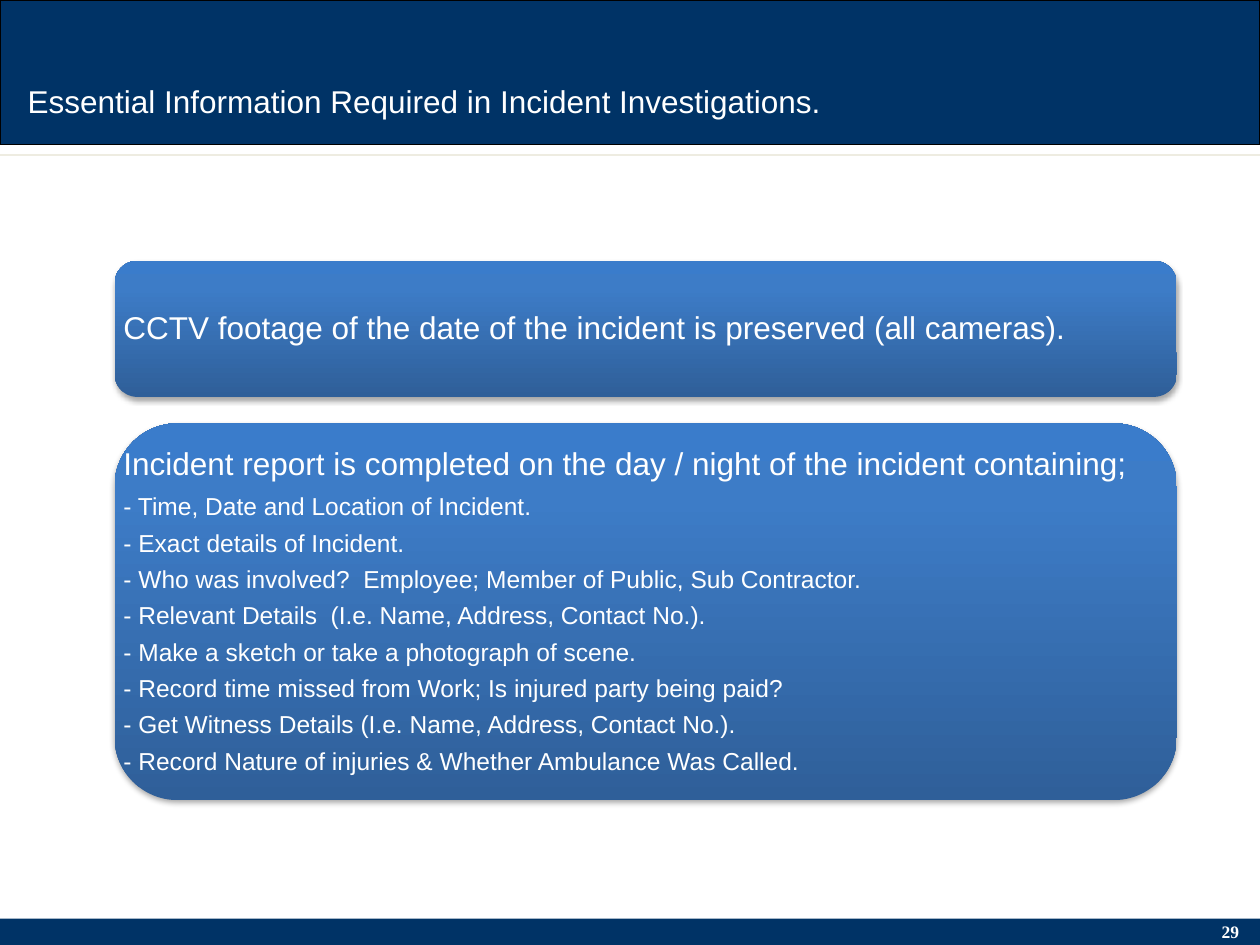
from lxml.etree import SubElement
from pptx import Presentation
from pptx.dml.color import RGBColor
from pptx.enum.shapes import MSO_CONNECTOR, MSO_SHAPE
from pptx.enum.text import MSO_ANCHOR, PP_ALIGN
from pptx.oxml import parse_xml
from pptx.oxml.ns import qn
from pptx.util import Inches, Pt

TITLE = "Essential Information Required in Incident Investigations."
PAGE = "29"
CARDS = [
    (2.07, 1.08, "CCTV footage of the date of the incident is preserved (all cameras).", []),
    (3.36, 2.99, "Incident report is completed on the day / night of the incident containing;", [
        "- Time, Date and Location of Incident.",
        "- Exact details of Incident.",
        "- Who was involved?  Employee; Member of Public, Sub Contractor.",
        "- Relevant Details  (I.e. Name, Address, Contact No.).",
        "- Make a sketch or take a photograph of scene.",
        "- Record time missed from Work; Is injured party being paid?",
        "- Get Witness Details (I.e. Name, Address, Contact No.).",
        "- Record Nature of injuries & Whether Ambulance Was Called.",
    ]),
]
BANDS = [(0, 1.15), (7.29, 0.21)]
LEFT, WIDTH, PAD = 0.91, 8.43, 0.07

NAVY = RGBColor(0x00, 0x33, 0x66)
BLACK = RGBColor(0x00, 0x00, 0x00)
WHITE = RGBColor(0xFF, 0xFF, 0xFF)
CREAM = RGBColor(0xEE, 0xEC, 0xE1)
STOPS = [
    (0, RGBColor(0x2F, 0x5F, 0x99)),
    (80, RGBColor(0x3D, 0x7C, 0xC7)),
    (100, RGBColor(0x3A, 0x7C, 0xCB)),
]
NS = 'xmlns:a="http://schemas.openxmlformats.org/drawingml/2006/main"'


def style(par, text, size, name="Arial", bold=False):
    par.text = text
    font = par.font
    font.size, font.name, font.bold = Pt(size), name, bold
    font.color.rgb = WHITE


def shade(shape):
    stops = "".join(
        f'<a:gs pos="{pos * 1000}"><a:srgbClr val="{tint}"/></a:gs>'
        for pos, tint in STOPS
    )
    grad = parse_xml(
        f'<a:gradFill {NS} rotWithShape="1"><a:gsLst>{stops}</a:gsLst>'
        '<a:lin ang="16200000" scaled="0"/></a:gradFill>'
    )
    glow = parse_xml(
        f'<a:effectLst {NS}><a:outerShdw blurRad="{Pt(3.1)}" dist="{Pt(1.8)}" '
        'dir="5400000" rotWithShape="0"><a:srgbClr val="000000">'
        '<a:alpha val="35000"/></a:srgbClr></a:outerShdw></a:effectLst>'
    )
    shape.line.fill.background()
    props = shape._element.spPr
    props.find(qn("a:prstGeom")).addnext(grad)
    props.append(glow)


def add_card(shapes, top, high, head, items):
    area = Inches(LEFT), Inches(top), Inches(WIDTH), Inches(high)
    shade(shapes.add_shape(MSO_SHAPE.ROUNDED_RECTANGLE, *area))
    frame = shapes.add_textbox(*area).text_frame
    frame.word_wrap = True
    frame.vertical_anchor = MSO_ANCHOR.MIDDLE
    frame.margin_left = frame.margin_right = Inches(PAD)
    frame.margin_top = frame.margin_bottom = Inches(PAD)
    for i, text in enumerate([head] + items):
        par = frame.add_paragraph() if i else frame.paragraphs[0]
        size = 14 if i else 18
        style(par, text, size)
        par.line_spacing = 0.9
        par.space_after = Pt(size * 0.4)


def main():
    deck = Presentation()
    deck.slide_width, deck.slide_height = Inches(10), Inches(7.5)
    slide = deck.slides.add_slide(deck.slide_layouts[5])
    shapes = slide.shapes
    title = shapes.title

    bars = []
    for top, high in BANDS:
        bar = shapes.add_shape(
            MSO_SHAPE.RECTANGLE, 0, Inches(top), deck.slide_width, Inches(high))
        bar.shadow.inherit = False
        bar.fill.solid()
        bar.fill.fore_color.rgb = NAVY
        bar.line.fill.background()
        bars.append(bar)
    edge = bars[0].line
    edge.color.rgb, edge.width = BLACK, Pt(0.75)

    rule = shapes.add_connector(
        MSO_CONNECTOR.STRAIGHT, 0, Inches(1.23), deck.slide_width, Inches(1.23))
    rule.line.color.rgb, rule.line.width = CREAM, Pt(1.5)
    SubElement(rule._element.spPr, qn("a:effectLst"))

    page = shapes.add_textbox(Inches(9.57), Inches(7.26), Inches(0.39), Inches(0.27))
    page.text_frame.word_wrap = True
    par = page.text_frame.paragraphs[0]
    style(par, PAGE, 10, "Times New Roman", True)
    par.alignment = PP_ALIGN.CENTER

    bars[-1]._element.addnext(title._element)
    title.left, title.top = Inches(0.12), Inches(0.6)
    title.width, title.height = Inches(7.8), Inches(0.4)
    title.text_frame.vertical_anchor = MSO_ANCHOR.TOP
    par = title.text_frame.paragraphs[0]
    style(par, TITLE, 18)
    par.alignment = PP_ALIGN.LEFT

    for card in CARDS:
        add_card(shapes, *card)
    deck.save("out.pptx")


if __name__ == "__main__":
    main()
